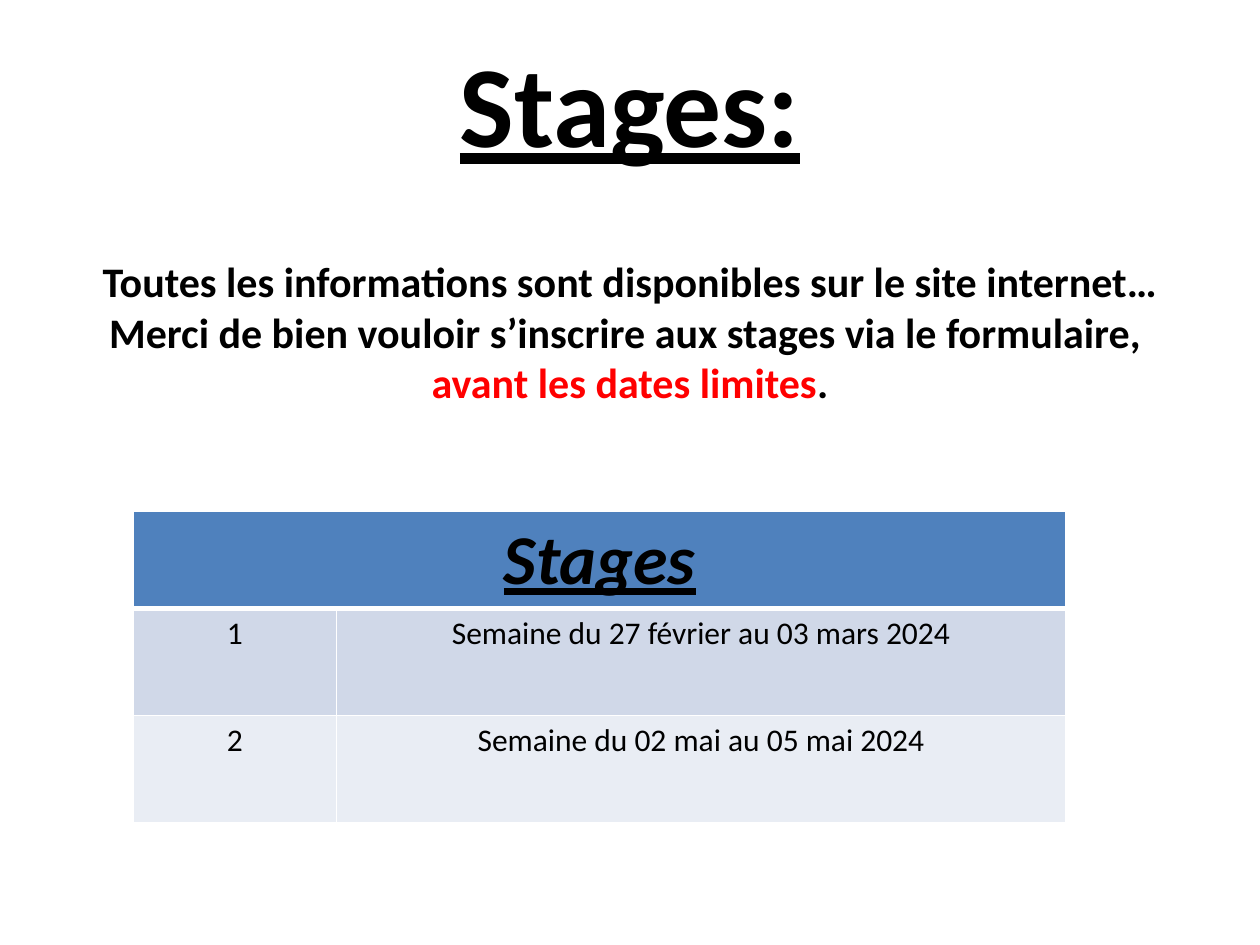
from lxml import etree
from pptx import Presentation
from pptx.dml.color import RGBColor
from pptx.enum.text import MSO_ANCHOR, PP_ALIGN
from pptx.oxml.ns import qn
from pptx.util import Inches, Pt

CENTER = PP_ALIGN.CENTER
MIDDLE = MSO_ANCHOR.MIDDLE
TITLE_ONLY = 5

BLACK, RED, WHITE = "000000", "FF0000", "FFFFFF"
HEADER_FILL = "4F81BD"
BAND_FILLS = ("D0D8E8", "E9EDF4")

TITLE_FONT = {"size": Pt(66), "bold": True, "underline": True}
NOTICE_FONT = {"size": Pt(24), "bold": True}
HEADER_FONT = {"size": Pt(40), "bold": True, "italic": True, "underline": True}
ROW_FONT = {"size": Pt(18), "bold": False}

NOTICE = [
    [("Toutes les informations sont disponibles sur le site internet…", BLACK)],
    [("Merci de bien vouloir s’inscrire aux stages via le formulaire, ", BLACK)],
    [("avant les dates limites", RED), (".", BLACK)],
]
WEEKS = ["Semaine du 27 février au 03 mars 2024",
         "Semaine du 02 mai au 05 mai 2024"]


def rgb(value):
    return RGBColor.from_string(value)


def write_paragraph(paragraph, pieces, font_values):
    """Fill a centred paragraph with (text, colour) pieces."""
    paragraph.alignment = CENTER
    for text, colour in pieces:
        run = paragraph.add_run()
        run.text = text
        run.font.name = "Calibri"
        run.font.color.rgb = rgb(colour)
        for name, value in font_values.items():
            setattr(run.font, name, value)


def set_borders(cell, bottom_width=1):
    """Draw white cell borders; call before setting the fill."""
    properties = cell._tc.get_or_add_tcPr()
    widths = {"a:lnL": 1, "a:lnR": 1, "a:lnT": 1, "a:lnB": bottom_width}
    for tag, width in widths.items():
        line = etree.SubElement(properties, qn(tag), w=str(Pt(width)))
        fill = etree.SubElement(line, qn("a:solidFill"))
        etree.SubElement(fill, qn("a:srgbClr"), val=WHITE)


def write_cell(cell, text, fill, font_values, bottom_width=1):
    set_borders(cell, bottom_width)
    cell.fill.solid()
    cell.fill.fore_color.rgb = rgb(fill)
    write_paragraph(cell.text_frame.paragraphs[0], [(text, BLACK)], font_values)


def place_title(slide, left, top, width, height):
    title = slide.shapes.title
    title.left, title.top, title.width, title.height = left, top, width, height
    title.text_frame.vertical_anchor = MIDDLE
    write_paragraph(title.text_frame.paragraphs[0], [("Stages:", BLACK)], TITLE_FONT)


def place_notice(slide, left, top, width, height):
    frame = slide.shapes.add_textbox(left, top, width, height).text_frame
    frame.word_wrap = True
    for index, pieces in enumerate(NOTICE):
        paragraph = frame.add_paragraph() if index else frame.paragraphs[0]
        write_paragraph(paragraph, pieces, NOTICE_FONT)


def place_schedule(slide, left, top, width, height):
    table = slide.shapes.add_table(len(WEEKS) + 1, 2, left, top, width, height).table
    number_width, week_height = Inches(1.61), Inches(0.85)
    table.columns[0].width = number_width
    table.columns[1].width = width - number_width
    table.rows[0].height = height - len(WEEKS) * week_height

    header = table.cell(0, 0)
    header.merge(table.cell(0, 1))
    write_cell(header, "Stages", HEADER_FILL, HEADER_FONT, bottom_width=3)
    for number, (week, fill) in enumerate(zip(WEEKS, BAND_FILLS), start=1):
        table.rows[number].height = week_height
        for column, text in enumerate((str(number), week)):
            write_cell(table.cell(number, column), text, fill, ROW_FONT)


def main():
    presentation = Presentation()
    presentation.slide_width, presentation.slide_height = Inches(10), Inches(7.5)
    slide = presentation.slides.add_slide(presentation.slide_layouts[TITLE_ONLY])
    place_title(slide, Inches(0.75), Inches(0), Inches(8.5), Inches(1.61))
    place_notice(slide, Inches(0), Inches(1.98), Inches(10), Inches(1.31))
    place_schedule(slide, Inches(1.06), Inches(4.06), Inches(7.4), Inches(2.47))
    presentation.save("out.pptx")


if __name__ == "__main__":
    main()
